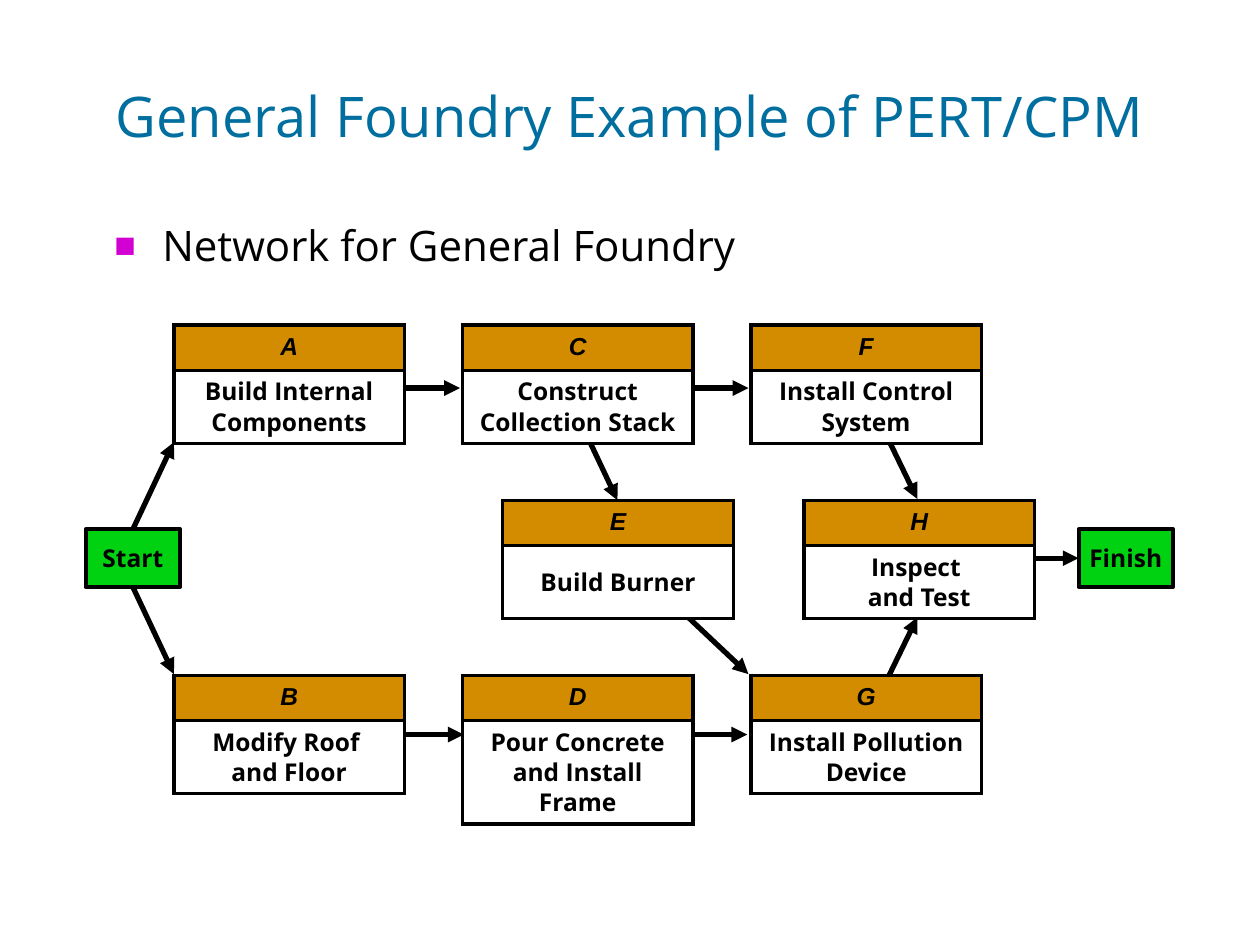
"""Build the General Foundry PERT/CPM network slide."""
from copy import deepcopy
from dataclasses import dataclass
from typing import Any, Optional

from lxml import etree
from pptx import Presentation
from pptx import util as u
from pptx.dml.color import RGBColor
from pptx.enum import shapes, text
from pptx.oxml import ns

BLACK = RGBColor(0x00, 0x00, 0x00)
WHITE = RGBColor(0xFF, 0xFF, 0xFF)
BLUE = RGBColor(0x00, 0x6E, 0x9E)
ORANGE = RGBColor(0xD3, 0x8B, 0x00)
GREEN = RGBColor(0x00, 0xD2, 0x11)
MAGENTA = RGBColor(0xD3, 0x00, 0xD3)

LEFT, COLUMN_PITCH, ACTIVITY_WIDTH = 1.38, 2.29, 1.83
TOP, ROW_PITCH, HEADER_HEIGHT = 2.58, 1.39, 0.36
TITLE_FORMAT = {"size": u.Pt(32), "name": "Open Sans", "color": BLUE}
BODY_FORMAT = {"size": u.Pt(24), "name": "Open Sans", "color": BLACK}
LABEL_FORMAT = {"size": u.Pt(14), "name": "Open Sans", "color": BLACK, "bold": True, "italic": False}
LETTER_FORMAT = {**LABEL_FORMAT, "name": "Arial", "italic": True}


@dataclass
class Activity:
    letter: str
    label: str
    column: int
    row: int
    shift: float = 0
    body_height: float = 0.58


@dataclass
class Milestone:
    label: str
    left: float


@dataclass
class Arrow:
    x1: float
    y1: float
    x2: float
    y2: float
    source: Optional[tuple[str, int]] = None
    target: Optional[tuple[str, int]] = None


ACTIVITIES = [
    Activity("A", "Build Internal Components", 0, 0),
    Activity("B", "Modify Roof \nand Floor", 0, 2),
    Activity("C", "Construct Collection Stack", 1, 0),
    Activity("D", "Pour Concrete and Install Frame", 1, 2, body_height=0.82),
    Activity("E", "Build Burner", 1, 1, shift=0.32),
    Activity("F", "Install Control System", 2, 0),
    Activity("G", "Install Pollution Device", 2, 2),
    Activity("H", "Inspect \nand Test", 2, 1, shift=0.42),
]
MILESTONES = [Milestone("Start", 0.68), Milestone("Finish", 8.56)]
ARROWS = [
    Arrow(6.93, 3.24, 7.28, 3.96),
    Arrow(5.42, 4.86, 5.94, 5.35),
    Arrow(4.56, 3.25, 4.9, 3.97),
    Arrow(6.93, 5.62, 7.28, 4.9),
    Arrow(5.49, 3.08, 5.94, 3.08),
    Arrow(3.19, 3.08, 3.65, 3.08),
    Arrow(5.47, 5.83, 5.93, 5.83),
    Arrow(3.22, 5.83, 3.68, 5.83),
    Arrow(8.06, 4.43, 8.51, 4.43, target=("Finish", 1)),
    Arrow(1.03, 4.62, 1.38, 5.35, source=("Start", 2)),
    Arrow(1.03, 4.24, 1.38, 3.51, source=("Start", 0)),
]


def add_element(parent: Any, tag: str, **attributes: str) -> Any:
    return etree.SubElement(parent, ns.qn(tag), attributes)


def write_text(frame: Any, content: str, formats: dict[str, Any],
               alignment: Any = text.PP_ALIGN.CENTER, line_spacing: float = 0.9) -> Any:
    paragraph = frame.paragraphs[0]
    paragraph.text = content
    paragraph.alignment = alignment
    paragraph.line_spacing = line_spacing
    for run in paragraph.runs:
        for name, value in formats.items():
            if name == "color":
                run.font.color.rgb = value
            else:
                setattr(run.font, name, value)
    for line_break in paragraph._p.findall(ns.qn("a:br")):
        line_break.append(deepcopy(paragraph.runs[0]._r.rPr))
    return paragraph


def place(shape: Any, left: float, top: float, width: float, height: float) -> None:
    for name, value in {"left": left, "top": top, "width": width, "height": height}.items():
        setattr(shape, name, u.Inches(value))


def add_heading(slide: Any) -> None:
    title = slide.shapes.title
    place(title, 0.75, 0.43, 8.5, 1.03)
    title.text_frame.vertical_anchor = text.MSO_ANCHOR.MIDDLE
    write_text(title.text_frame, "General Foundry Example of PERT/CPM", TITLE_FORMAT)


def add_bullet(slide: Any) -> None:
    box = slide.shapes.add_textbox(u.Inches(0.81), u.Inches(1.74), u.Inches(8.5), u.Inches(0.53))
    box.text_frame.word_wrap = True
    paragraph = write_text(box.text_frame, "Network for General Foundry", BODY_FORMAT, text.PP_ALIGN.LEFT)
    properties = paragraph._p.get_or_add_pPr()
    properties.set("marL", str(u.Inches(0.38)))
    properties.set("indent", str(u.Inches(-0.38)))
    add_element(add_element(properties, "a:buClr"), "a:srgbClr", val=str(MAGENTA))
    add_element(properties, "a:buSzPct", val="85000")
    add_element(properties, "a:buFont", typeface="Arial")
    add_element(properties, "a:buChar", char="■")


def add_milestone(slide: Any, milestone: Milestone) -> Any:
    shape = slide.shapes.add_shape(shapes.MSO_SHAPE.RECTANGLE, u.Inches(milestone.left),
                                   u.Inches(4.2), u.Inches(0.75), u.Inches(0.46))
    shape.shadow.inherit = False
    shape.fill.solid()
    shape.fill.fore_color.rgb = GREEN
    shape.line.color.rgb = BLACK
    shape.line.width = u.Pt(2.25)
    shape.text_frame.word_wrap = False
    shape.text_frame.vertical_anchor = text.MSO_ANCHOR.MIDDLE
    write_text(shape.text_frame, milestone.label, LABEL_FORMAT, line_spacing=1.0)
    return shape


def add_arrow(slide: Any, arrow: Arrow, milestones: dict[str, Any]) -> None:
    ends = [u.Inches(value) for value in (arrow.x1, arrow.y1, arrow.x2, arrow.y2)]
    connector = slide.shapes.add_connector(shapes.MSO_CONNECTOR.STRAIGHT, *ends)
    connector.line.color.rgb = BLACK
    connector.line.width = u.Pt(3)
    add_element(connector.line._get_or_add_ln(), "a:tailEnd", type="triangle")
    add_element(connector._element.spPr, "a:effectLst")
    if arrow.source:
        connector.begin_connect(milestones[arrow.source[0]], arrow.source[1])
    if arrow.target:
        connector.end_connect(milestones[arrow.target[0]], arrow.target[1])


def format_cell(cell: Any, content: str, formats: dict[str, Any], fill: RGBColor) -> None:
    cell.vertical_anchor = text.MSO_ANCHOR.MIDDLE
    write_text(cell.text_frame, content, formats)
    properties = cell._tc.get_or_add_tcPr()
    for side in ("a:lnL", "a:lnR", "a:lnT", "a:lnB"):
        border = add_element(properties, side, w=str(u.Pt(2.25)))
        add_element(add_element(border, "a:solidFill"), "a:srgbClr", val=str(BLACK))
    cell.fill.solid()
    cell.fill.fore_color.rgb = fill


def add_activity(slide: Any, activity: Activity) -> None:
    left = LEFT + activity.column * COLUMN_PITCH + activity.shift
    top = TOP + activity.row * ROW_PITCH
    heights = (HEADER_HEIGHT, activity.body_height)
    table = slide.shapes.add_table(2, 1, u.Inches(left), u.Inches(top),
                                   u.Inches(ACTIVITY_WIDTH), u.Inches(sum(heights))).table
    table.first_row = table.horz_banding = False
    for row, height in zip(table.rows, heights):
        row.height = u.Inches(height)
    format_cell(table.cell(0, 0), activity.letter, LETTER_FORMAT, ORANGE)
    format_cell(table.cell(1, 0), activity.label, LABEL_FORMAT, WHITE)


def main() -> None:
    presentation = Presentation()
    presentation.slide_width, presentation.slide_height = u.Inches(10), u.Inches(7.5)
    slide = presentation.slides.add_slide(presentation.slide_layouts[5])
    add_heading(slide)
    add_bullet(slide)
    milestones = {milestone.label: add_milestone(slide, milestone) for milestone in MILESTONES}
    for arrow in ARROWS:
        add_arrow(slide, arrow, milestones)
    for activity in ACTIVITIES:
        add_activity(slide, activity)
    presentation.save("out.pptx")


if __name__ == "__main__":
    main()
